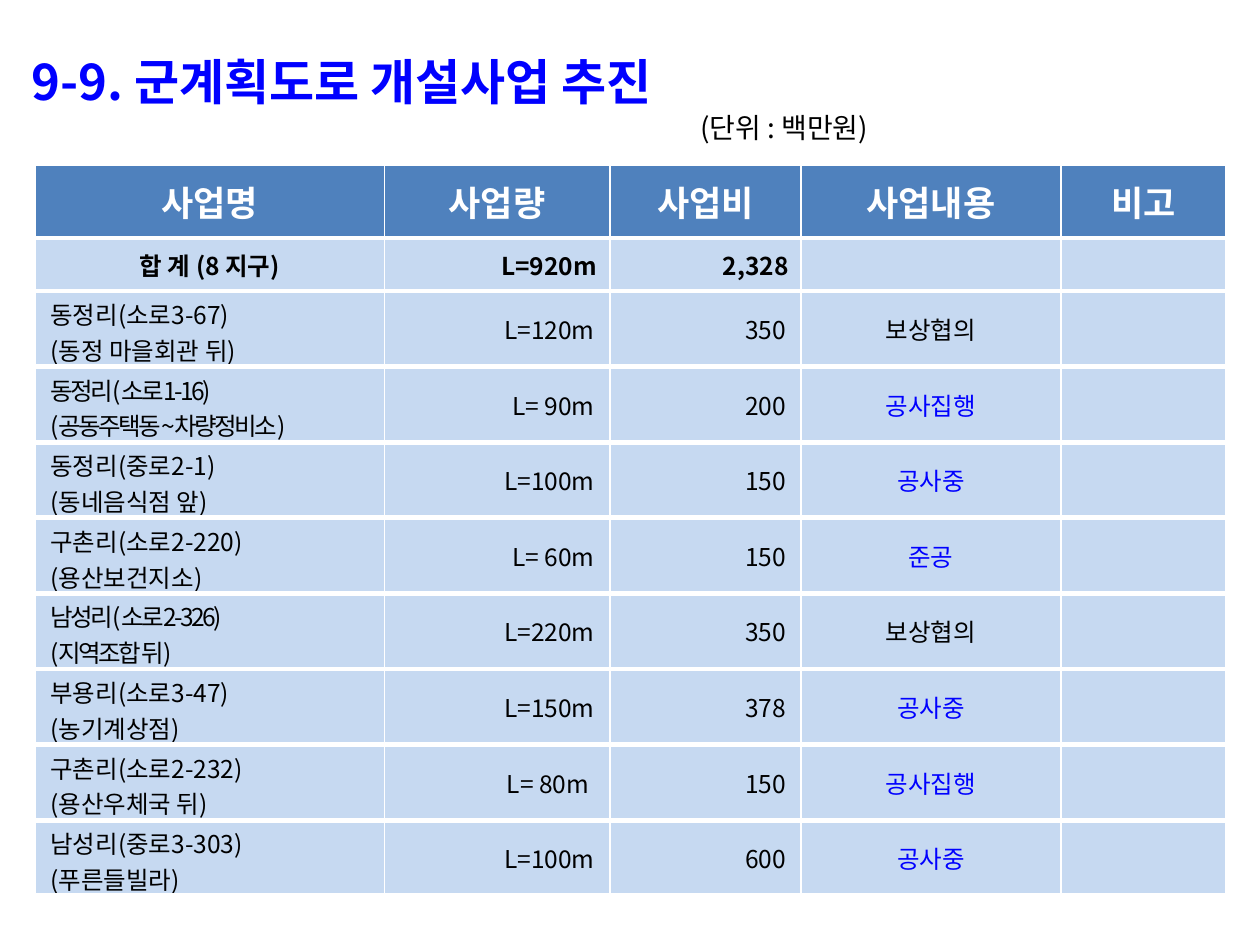
from lxml import etree
from pptx import Presentation
from pptx.dml.color import RGBColor
from pptx.enum.text import MSO_ANCHOR, PP_ALIGN
from pptx.oxml.ns import qn
from pptx.util import Inches, Pt

LEFT, CENTER, RIGHT = PP_ALIGN.LEFT, PP_ALIGN.CENTER, PP_ALIGN.RIGHT
MIDDLE = MSO_ANCHOR.MIDDLE
FONT = "Noto Sans CJK KR"
BLUE, BLACK, WHITE = "0000FF", "000000", "FFFFFF"
HEAD_FILL, BODY_FILL = "4F81BD", "C6D9F1"

TITLE = "9-9. 군계획도로 개설사업 추진"
UNIT = "(단위 : 백만원)"
HEADERS = ["사업명", "사업량", "사업비", "사업내용", "비고"]
TOTAL = ["합 계 (8 지구)", "L=920m", "2,328", "", ""]
PROJECTS = [
    ["동정리(소로3-67)\n(동정 마을회관 뒤)", "L=120m", "350", "보상협의", ""],
    ["동정리(소로1-16)\n(공동주택동~차량정비소)", "L= 90m", "200", "공사집행", ""],
    ["동정리(중로2-1)\n(동네음식점 앞)", "L=100m", "150", "공사중", ""],
    ["구촌리(소로2-220)\n(용산보건지소)", "L= 60m", "150", "준공", ""],
    ["남성리(소로2-326)\n(지역조합 뒤)", "L=220m", "350", "보상협의", ""],
    ["부용리(소로3-47)\n(농기계상점)", "L=150m", "378", "공사중", ""],
    ["구촌리(소로2-232)\n(용산우체국 뒤)", "L= 80m ", "150", "공사집행", ""],
    ["남성리(중로3-303)\n(푸른들빌라)", "L=100m", "600", "공사중", ""],
]
TIGHT_ROWS = (1, 4)
COL_WIDTHS = [2.77, 1.79, 1.52, 2.06, 1.31]
ROW_HEIGHTS = [0.58, 0.42] + [0.6] * len(PROJECTS)
ALIGNS = [LEFT, RIGHT, RIGHT, CENTER, CENTER]


def rgb(color):
    return RGBColor.from_string(color)


def write(tf, text, size=14, color=BLACK, bold=False, align=LEFT, spacing=0):
    for i, line in enumerate(text.split("\n")):
        p = tf.paragraphs[0] if i == 0 else tf.add_paragraph()
        p.alignment = align
        r = p.add_run()
        r.text = line
        r.font.size, r.font.bold, r.font.name = Pt(size), bold, FONT
        r.font.color.rgb = rgb(color)
        rPr = r.font._element
        etree.SubElement(rPr, qn("a:ea"), typeface=FONT)
        if spacing:
            rPr.set("spc", str(int(spacing * 100)))


def set_borders(cell, **widths):
    tcPr = cell._tc.get_or_add_tcPr()
    for i, (side, width) in enumerate(widths.items()):
        ln = etree.Element(qn(f"a:ln{side}"), w=str(Pt(width)))
        fill = etree.SubElement(ln, qn("a:solidFill"))
        etree.SubElement(fill, qn("a:srgbClr"), val=WHITE)
        tcPr.insert(i, ln)


def fill_cell(cell, text, fill, side=0.1, top=0.05, bottom=0.05, top_line=3, **fmt):
    cell.fill.solid()
    cell.fill.fore_color.rgb = rgb(fill)
    set_borders(cell, L=1, R=1, T=top_line, B=3)
    cell.vertical_anchor = MIDDLE
    cell.margin_left = cell.margin_right = Inches(side)
    cell.margin_top, cell.margin_bottom = Inches(top), Inches(bottom)
    if text:
        write(cell.text_frame, text, **fmt)
    else:
        cell.margin_top = cell.margin_bottom = 0


def add_project_table(s):
    frame = s.shapes.add_table(len(ROW_HEIGHTS), len(COL_WIDTHS), Inches(0.28), Inches(1.31),
                               Inches(sum(COL_WIDTHS)), Inches(sum(ROW_HEIGHTS)))
    table = frame.table
    for column, width in zip(table.columns, COL_WIDTHS):
        column.width = Inches(width)
    for row, height in zip(table.rows, ROW_HEIGHTS):
        row.height = Inches(height)

    for c, text in enumerate(HEADERS):
        fill_cell(table.cell(0, c), text, HEAD_FILL, top_line=1,
                  size=20, color=WHITE, bold=True, align=CENTER)
    for c, text in enumerate(TOTAL):
        fill_cell(table.cell(1, c), text, BODY_FILL, bold=True,
                  align=ALIGNS[c] if c else CENTER)
    for i, project in enumerate(PROJECTS):
        for c, text in enumerate(project):
            started = c == 3 and text != "보상협의"
            fill_cell(table.cell(i + 2, c), text, BODY_FILL, side=0.12,
                      top=0.05 if c else 0.04, bottom=0.05 if c else 0,
                      color=BLUE if started else BLACK, align=ALIGNS[c],
                      spacing=-1.5 if c == 0 and i in TIGHT_ROWS else 0)


def main():
    prs = Presentation()
    prs.slide_width, prs.slide_height = Inches(10), Inches(7.5)
    s = prs.slides.add_slide(prs.slide_layouts[5])

    title = s.shapes.title
    title.left, title.top = Inches(0.15), Inches(0.31)
    title.width, title.height = Inches(9.65), Inches(0.66)
    title.text_frame.vertical_anchor = MIDDLE
    write(title.text_frame, TITLE, size=28, color=BLUE, bold=True)

    unit = s.shapes.add_textbox(Inches(5.46), Inches(0.83), Inches(1.9), Inches(0.42))
    unit.text_frame.word_wrap = True
    write(unit.text_frame, UNIT, size=16)

    add_project_table(s)
    prs.save("out.pptx")


if __name__ == "__main__":
    main()
